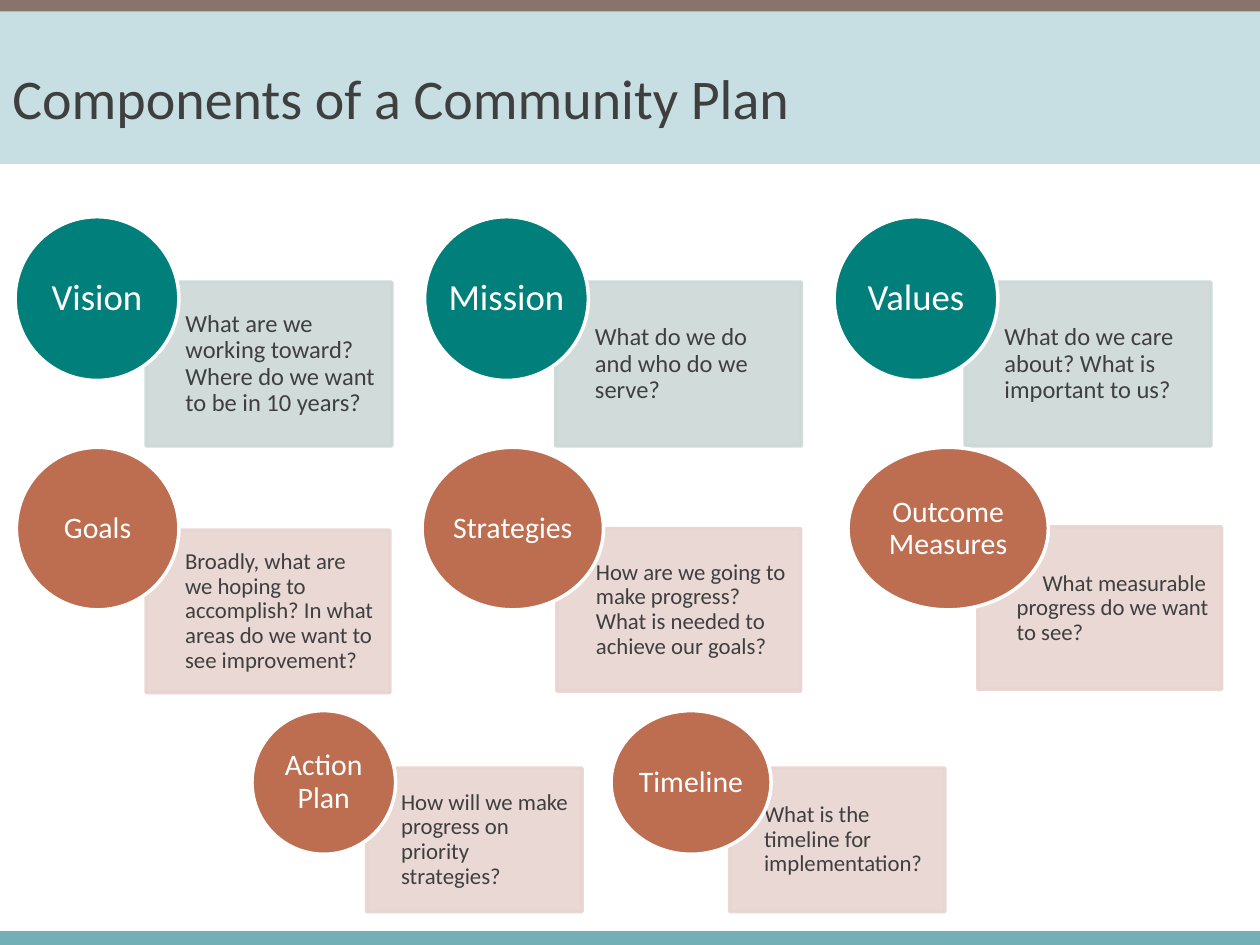
from dataclasses import dataclass

from lxml import etree
from pptx import Presentation
from pptx.dml.color import RGBColor
from pptx.enum.shapes import MSO_SHAPE
from pptx.enum.text import MSO_ANCHOR, PP_ALIGN
from pptx.oxml.ns import qn
from pptx.util import Emu, Inches, Pt

RECT, OVAL = MSO_SHAPE.RECTANGLE, MSO_SHAPE.OVAL
LEFT, MID = PP_ALIGN.LEFT, PP_ALIGN.CENTER
COLS, ROWS = 100, 75
WIDE, HIGH = Inches(10), Inches(7.5)
FONT = "Calibri"
HUES = {
    "brown": "88746A", "aqua": "73AFB6", "sky": "C7DFE2",
    "teal": "007F7B", "mist": "CCD8D7", "rust": "BD6D50",
    "rose": "E8D4D0", "ink": "3F3F3F", "white": "FFFFFF",
}


@dataclass
class Card:
    name: str
    text: str
    disc: float  # left column of the disc
    span: float  # width of the disc
    box: float  # left column of the box
    drop: float = 0.4  # fall of the box below the disc, as a share of its side
    lead: float = 0  # first-line indent, in columns


@dataclass
class Band:
    top: float
    side: float
    disc: str
    box: str
    head: int
    body: int
    pad: float
    cards: list[Card]


BANDS = [
    Band(17.2, 13, "teal", "mist", 21, 14, 1.1, [
        Card(name, text, 1.2 + 32.5 * i, 13, 11.6 + 32.5 * i)
        for i, (name, text) in enumerate([
            ("Vision", "What are we working toward? Where do we want to be in 10 years?"),
            ("Mission", "What do we do and who do we serve?"),
            ("Values", "What do we care about? What is important to us?"),
        ])
    ]),
    Band(35.5, 12.9, "rust", "rose", 17, 13, 1, [
        Card("Goals", "Broadly, what are we hoping to accomplish? "
             "In what areas do we want to see improvement?", 1.3, 12.9, 11.6, 0.51),
        Card("Strategies", "How are we going to make progress? "
             "What is needed to achieve our goals?", 33.5, 14.4, 44.2, 0.5),
        Card("Outcome Measures", "What measurable progress do we want to see?",
             67.3, 15.9, 77.6, 0.49, 2.05),
    ]),
    Band(56.4, 11.4, "rust", "rose", 17, 13, 1, [
        Card("Action Plan", "How will we make progress on priority strategies?",
             20, 11.4, 29.1),
        Card("Timeline", "What is the timeline for implementation?", 48.5, 12.7, 57.9),
    ]),
]


def across(n: float) -> Emu:
    return Emu(round(WIDE * n / COLS))


def down(n: float) -> Emu:
    return Emu(round(HIGH * n / ROWS))


def hue(name: str) -> RGBColor:
    return RGBColor.from_string(HUES[name])


def draw(slide, kind, x: float, y: float, w: float, h: float, fill: str, line: str = ""):
    shape = slide.shapes.add_shape(kind, across(x), down(y), across(w), down(h))
    shape.shadow.inherit = False
    shape.fill.solid()
    shape.fill.fore_color.rgb = hue(fill)
    if line:
        shape.line.color.rgb = hue(line)
        shape.line.width = Pt(2)
    else:
        shape.line.fill.background()
    return shape


def fade(shape, share: int) -> None:
    """Make fill and line opaque to the given percentage."""
    for tint in shape._element.spPr.iter(qn("a:srgbClr")):
        etree.SubElement(tint, qn("a:alpha")).set("val", str(share * 1000))


def write(shape, text: str, size: int, color: str, align, pads: tuple, gap: float = 0.9):
    """Set one paragraph; pads are left, top, right, bottom in grid cells."""
    frame = shape.text_frame
    frame.word_wrap = True
    frame.vertical_anchor = MSO_ANCHOR.MIDDLE
    frame.margin_left, frame.margin_right = across(pads[0]), across(pads[2])
    frame.margin_top, frame.margin_bottom = down(pads[1]), down(pads[3])
    para = frame.paragraphs[0]
    para.alignment = align
    para.line_spacing = gap
    run = para.add_run()
    run.text = text
    run.font.name, run.font.size = FONT, Pt(size)
    run.font.color.rgb = hue(color)
    return para


def place(slide, band: Band, card: Card) -> None:
    side, pad = band.side, band.pad
    wide = 1.5 * side
    box = draw(slide, RECT, card.box, band.top + card.drop * side,
               wide, side, band.box, band.box)
    fade(box, 90)
    para = write(box, card.text, band.body, "ink", LEFT, (0.16 * wide, pad, pad, pad))
    if card.lead:
        para._p.get_or_add_pPr().set("indent", str(across(card.lead)))
    disc = draw(slide, OVAL, card.disc, band.top, card.span, side, band.disc, "white")
    write(disc, card.name, band.head, "white", MID, (0, 0, 0, 0))


def main() -> None:
    deck = Presentation()
    deck.slide_width, deck.slide_height = WIDE, HIGH
    slide = deck.slides.add_slide(deck.slide_layouts[6])
    for top, tall, fill in [(0, 1, "brown"), (73.9, 1.1, "aqua"), (0.9, 12.1, "sky")]:
        draw(slide, RECT, 0, top, COLS, tall, fill)
    title = slide.shapes.add_textbox(0, down(1.1), WIDE, down(13.3))
    write(title, "Components of a Community Plan", 32, "ink", LEFT, (1, 0.5, 1, 0.5), 1)
    for band in BANDS:
        for card in band.cards:
            place(slide, band, card)
    deck.save("out.pptx")


if __name__ == "__main__":
    main()
